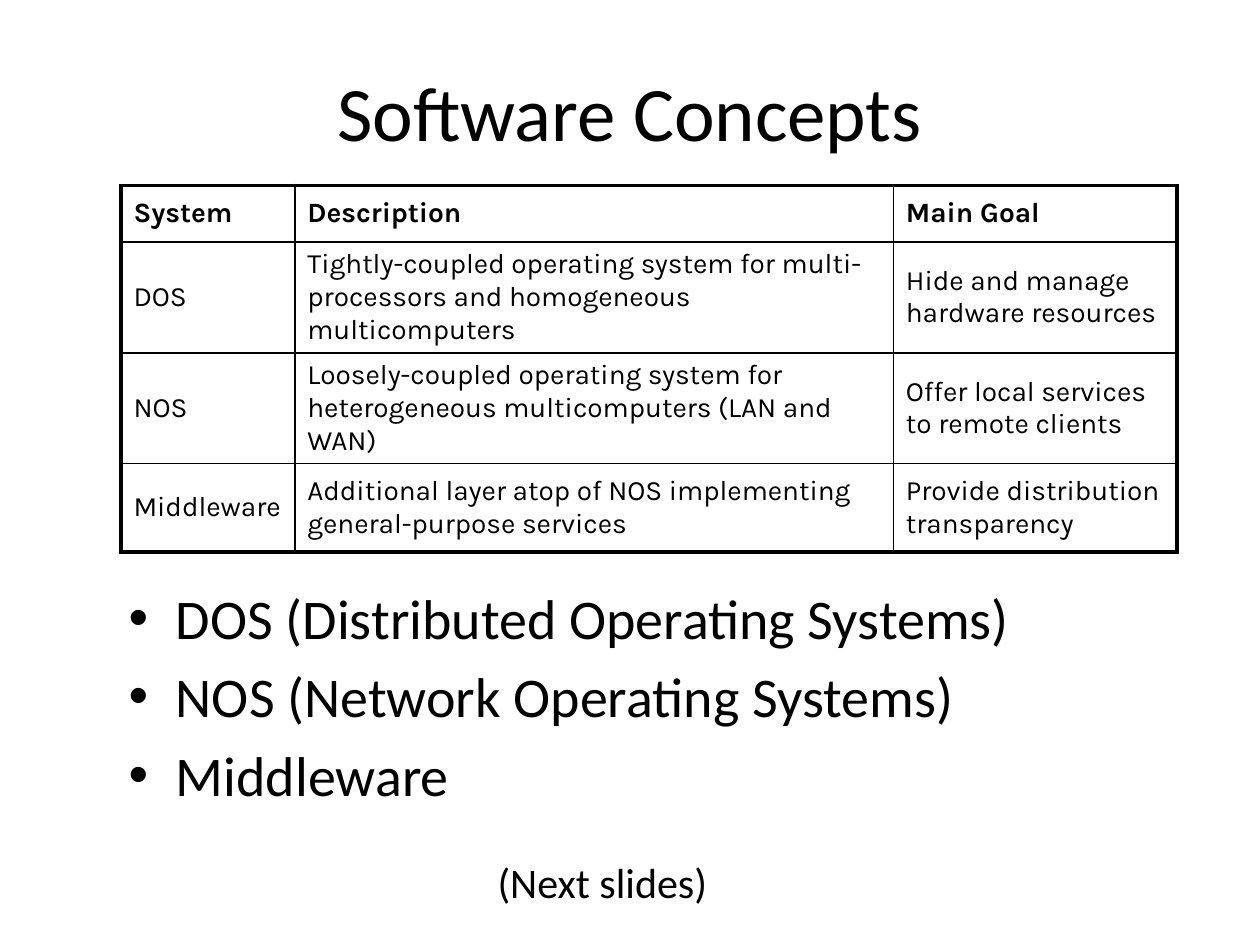
from pptx import Presentation
from pptx.dml.color import RGBColor
from pptx.enum.text import MSO_ANCHOR, MSO_AUTO_SIZE, PP_ALIGN
from pptx.oxml.ns import qn
from pptx.util import Inches, Pt
from lxml import etree

BLACK = RGBColor(0x00, 0x00, 0x00)
MIDDLE = MSO_ANCHOR.MIDDLE
NO_FIT = MSO_AUTO_SIZE.NONE
GROW = MSO_AUTO_SIZE.SHAPE_TO_FIT_TEXT
CENTER = PP_ALIGN.CENTER
THICK, THIN = Pt(2.25), Pt(1)


def add_run(p, text, size, font="Calibri", bold=False):
    r = p.add_run()
    r.text = text
    r.font.size = Pt(size)
    r.font.name = font
    r.font.bold = bold
    r.font.color.rgb = BLACK


def add_border(cell, side, width):
    ln = etree.Element(qn(f"a:ln{side}"), w=str(width))
    fill = etree.SubElement(ln, qn("a:solidFill"))
    etree.SubElement(fill, qn("a:srgbClr"), val=str(BLACK))
    cell._tc.get_or_add_tcPr().append(ln)


prs = Presentation()
prs.slide_width, prs.slide_height = Inches(10), Inches(7.5)
s = prs.slides.add_slide(prs.slide_layouts[1])

title, body = s.placeholders
title.left, title.top = Inches(0.75), Inches(0.25)
title.width, title.height = Inches(8.5), Inches(1.25)
tf = title.text_frame
tf.auto_size = NO_FIT
tf.vertical_anchor = MIDDLE
tf.paragraphs[0].alignment = CENTER
add_run(tf.paragraphs[0], "Software Concepts", 44)

body.left, body.top = Inches(0.92), Inches(4.58)
body.width, body.height = Inches(8.83), Inches(2.08)
tf = body.text_frame
tf.auto_size = NO_FIT
bullets = ["DOS (Distributed Operating Systems)", "NOS (Network Operating Systems)", "Middleware"]
for i, text in enumerate(bullets):
    p = tf.add_paragraph() if i else tf.paragraphs[0]
    add_run(p, text, 32)

rows = [
    ("System", "Description", "Main Goal"),
    ("DOS", "Tightly-coupled operating system for multi-processors and homogeneous multicomputers",
     "Hide and manage hardware resources"),
    ("NOS", "Loosely-coupled operating system for heterogeneous multicomputers (LAN and WAN)",
     "Offer local services to remote clients"),
    ("Middleware", "Additional layer atop of NOS implementing general-purpose services",
     "Provide distribution transparency"),
]
col_widths = [1.38, 4.75, 2.25]
row_heights = [0.45, 0.75, 0.62, 0.7]
last_row, last_col = len(rows) - 1, len(col_widths) - 1
table = s.shapes.add_table(len(rows), len(col_widths), Inches(0.96), Inches(1.47),
                           Inches(sum(col_widths)), Inches(sum(row_heights))).table
table.horz_banding = False
for col, width in zip(table.columns, col_widths):
    col.width = Inches(width)
for i, (row, height, texts) in enumerate(zip(table.rows, row_heights, rows)):
    row.height = Inches(height)
    for j, (cell, text) in enumerate(zip(row.cells, texts)):
        cell.vertical_anchor = MIDDLE
        add_run(cell.text_frame.paragraphs[0], text, 16, "Karla", i == 0)
        edges = {"L": j == 0, "R": j == last_col, "T": i == 0, "B": i == last_row}
        for side, outer in edges.items():
            add_border(cell, side, THICK if outer else THIN)
        cell.fill.background()

note = s.shapes.add_textbox(Inches(3.85), Inches(6.75), Inches(1.88), Inches(0.5))
tf = note.text_frame
tf.word_wrap = False
tf.auto_size = GROW
add_run(tf.paragraphs[0], "(Next slides)", 24)

prs.save("out.pptx")
